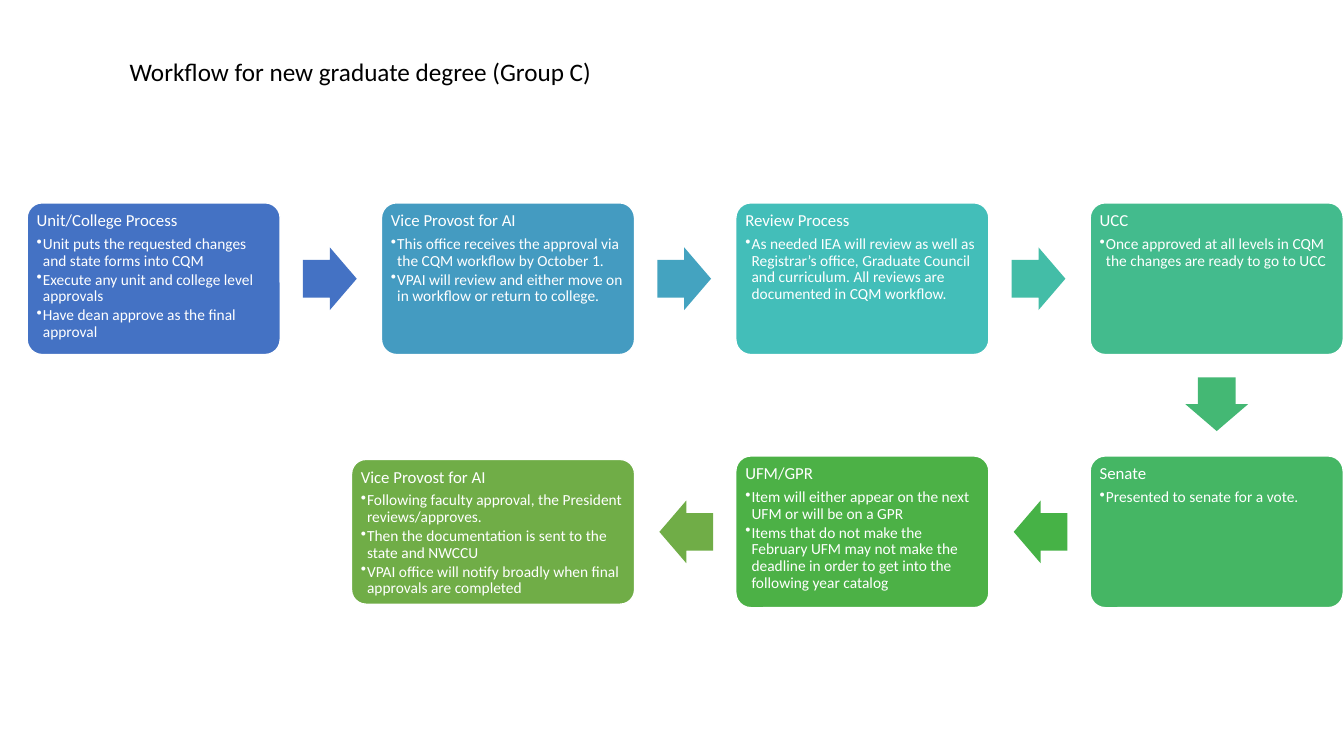
from pptx import Presentation
from pptx.dml.color import RGBColor as Rgb
from pptx.enum.shapes import MSO_SHAPE as Kind
from pptx.enum.text import MSO_ANCHOR as Anchor, MSO_AUTO_SIZE as Fit, PP_ALIGN as Align
from pptx.oxml.ns import qn
from pptx.util import Pt
from lxml.etree import SubElement as Sub

# Content: column, row, box colour, arrow colour, arrow turn, heading, bullets
TITLE = "Workflow for new graduate degree (Group C)"
STEPS = [
    (0, 0, "blue", "blue", 0, "Unit/College Process", [
        "Unit puts the requested changes and state forms into CQM",
        "Execute any unit and college level approvals",
        "Have dean approve as the final approval"]),
    (1, 0, "azure", "sky", 0, "Vice Provost for AI", [
        "This office receives the approval via the CQM workflow by October 1.",
        "VPAI will review and either move on in workflow or return to college."]),
    (2, 0, "teal", "aqua", 0, "Review Process", [
        "As needed IEA will review as well as Registrar’s office, Graduate Council "
        "and curriculum. All reviews are documented in CQM workflow."]),
    (3, 0, "mint", "jade", 90, "UCC", [
        "Once approved at all levels in CQM the changes are ready to go to UCC"]),
    (3, 1, "sea", "leaf", 180, "Senate", ["Presented to senate for a vote."]),
    (2, 1, "grass", "olive", 180, "UFM/GPR", [
        "Item will either appear on the next UFM or will be on a GPR",
        "Items that do not make the February UFM may not make the deadline "
        "in order to get into the following year catalog"]),
    (1, 1, "olive", None, None, "Vice Provost for AI", [
        "Following faculty approval, the President reviews/approves.",
        "Then the documentation is sent to the state and NWCCU",
        "VPAI office will notify broadly when final approvals are completed"]),
]
COLORS = {
    "blue": "4472C4", "azure": "449BC1", "sky": "44A3C0", "teal": "43BEB9",
    "aqua": "43BDA7", "mint": "43BB8D", "jade": "44B874", "sea": "45B664",
    "leaf": "46B246", "grass": "4CB146", "olive": "70AD47",
    "white": "FFFFFF", "black": "000000",
}

# Layout in points
LEFT, TOP = 19.4, 144.9
STEP_X, STEP_Y = 253.1, 180.8
BOX_W, BOX_H = 180.8, 108.4
END_W, END_H = 202.2, 103.4
ARROW_W, ARROW_H, GAP = 38.4, 44.8, 16.2
WAYS = {0: (1, 0), 90: (0, 1), 180: (-1, 0)}

# Formats
HEAD = {"size": Pt(12), "name": "Calibri"}
ITEM = {"size": Pt(11), "name": "Calibri"}
NAME = {"size": Pt(18), "name": "Calibri", "bold": False}
PAD = {f"margin_{side}": Pt(3.6) for side in ("left", "top", "right", "bottom")}
FRAME = {"word_wrap": True, "vertical_anchor": Anchor.TOP, "auto_size": Fit.NONE}


def style(item, form):
    for key, val in form.items():
        setattr(item, key, val)


def hue(name):
    return Rgb.from_string(COLORS[name])


def write(para, text, form, color):
    run = para.add_run()
    run.text = text
    style(run.font, form)
    run.font.color.rgb = hue(color)
    para.alignment = Align.LEFT


def draw(kind, x, y, w, h, color, *adjs):
    shape = slide.shapes.add_shape(kind, Pt(x), Pt(y), Pt(w), Pt(h))
    shape.shadow.inherit = False
    shape.fill.solid()
    shape.fill.fore_color.rgb = hue(color)
    for i, adj in enumerate(adjs):
        shape.adjustments[i] = adj
    return shape


def add_box(x, y, w, h, color, head, items):
    box = draw(Kind.ROUNDED_RECTANGLE, x, y, w, h, color, 0.1)
    box.line.color.rgb = hue("white")
    box.line.width = Pt(1)
    frame = box.text_frame
    style(frame, FRAME | PAD)
    first = frame.paragraphs[0]
    style(first, {"line_spacing": 0.9, "space_after": Pt(4.2)})
    write(first, head, HEAD, "white")
    for text in items:
        para = frame.add_paragraph()
        style(para, {"level": 1, "line_spacing": 0.9, "space_after": Pt(1.65)})
        write(para, text, ITEM, "white")
        props = para._p.get_or_add_pPr()
        props.set("marL", str(Pt(4.5)))
        props.set("indent", str(Pt(-4.5)))
        Sub(props, qn("a:buChar")).set("char", "•")


def add_arrow(mid_x, mid_y, color, turn):
    dx, dy = WAYS[turn]
    x = mid_x + dx * (BOX_W / 2 + GAP + ARROW_W / 2)
    y = mid_y + dy * (BOX_H / 2 + GAP + ARROW_W / 2)
    arrow = draw(Kind.RIGHT_ARROW, x - ARROW_W / 2, y - ARROW_H / 2,
                 ARROW_W, ARROW_H, color, 0.6, 0.5)
    arrow.line.fill.background()
    arrow.rotation = turn


deck = Presentation()
style(deck, {"slide_width": Pt(960), "slide_height": Pt(540)})
slide = deck.slides.add_slide(deck.slide_layouts[5])

# Title
title = slide.shapes.title
style(title, {"left": Pt(85.4), "top": Pt(36.7), "width": Pt(789.8), "height": Pt(51.1)})
style(title.text_frame, FRAME)
write(title.text_frame.paragraphs[0], TITLE, NAME, "black")

# Steps: the last box is wider, flush right in its column, centred on its row
for col, row, color, tint, turn, head, items in STEPS:
    last = turn is None
    w, h = (END_W, END_H) if last else (BOX_W, BOX_H)
    x = LEFT + col * STEP_X + BOX_W - w
    y = TOP + row * STEP_Y + (BOX_H - h) / 2
    add_box(x, y, w, h, color, head, items)
    if not last:
        add_arrow(x + w / 2, y + h / 2, tint, turn)

deck.save("out.pptx")
